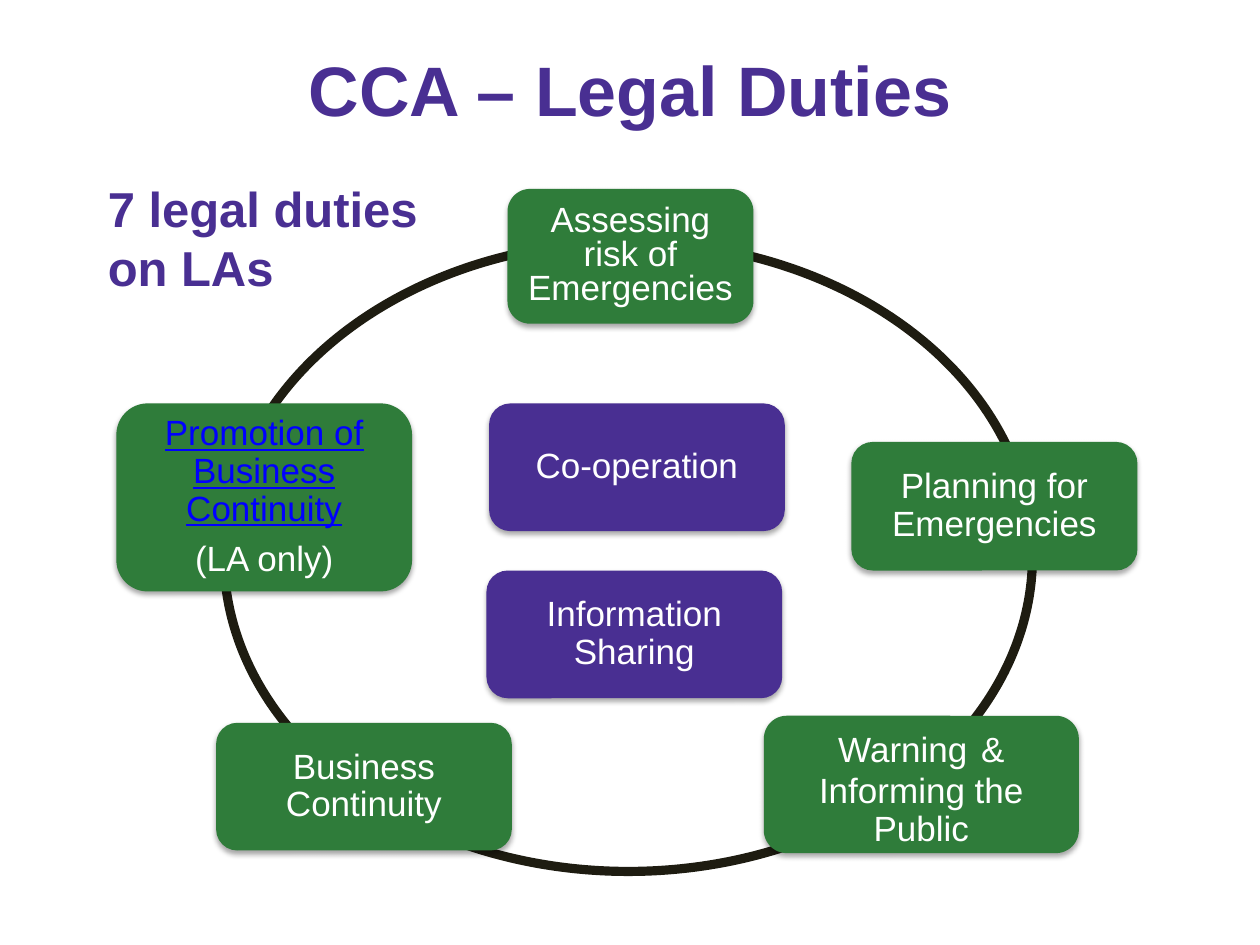
from lxml import etree
from pptx import Presentation
from pptx.dml.color import RGBColor
from pptx.enum.shapes import MSO_SHAPE as Shape
from pptx.enum.text import MSO_ANCHOR as Anchor, PP_ALIGN as Align
from pptx.oxml.ns import qn
from pptx.util import Pt

COLORS = {"purple": "492F92", "green": "2F7C3A", "ring": "1E1C11",
          "white": "FFFFFF", "link": "0000FF", "shadow": "000000"}
FONT = "Arial"
RING = (128, 138, 462, 360)

# Box relative to the ring's top left corner, fill, line spacing, paragraphs.
# A paragraph is a list of (text, size, color, underlined) runs.
DUTIES = [
    ((358.5, 114.5, 163.5, 73.5), "green", 0.9,
     [[("Planning for Emergencies", 20, "white", False)]]),
    ((162, -30, 140.5, 77), "green", 0.8,
     [[("Assessing risk of Emergencies", 20, "white", False)]]),
    ((308.5, 271, 180, 78.5), "green", 0.9,
     [[("Warning", 20, "white", False), (" ", 28, "white", False),
       ("& Informing the Public", 20, "white", False)]]),
    ((-61.5, 92.5, 169, 107.5), "green", 0.9,
     [[("Promotion of Business Continuity", 20, "link", True)],
      [("(LA only)", 20, "white", False)]]),
    ((-4.5, 275, 169, 73), "green", 0.9,
     [[("Business Continuity", 20, "white", False)]]),
    ((150, 188, 169, 73), "purple", 0.9,
     [[("Information Sharing", 20, "white", False)]]),
    ((151.5, 92.5, 169, 73), "purple", 0.9,
     [[("Co-operation", 20, "white", False)]]),
]


def rgb(name):
    return RGBColor.from_string(COLORS[name])


def add_run(paragraph, text, size, color, bold=False, underline=False):
    run = paragraph.add_run()
    run.text = text
    font = run.font
    font.name, font.size, font.bold = FONT, Pt(size), bold
    font.underline = underline
    font.color.rgb = rgb(color)


def add_soft_shadow(shape):
    shape.shadow.inherit = False
    effects = shape._element.spPr.find(qn("a:effectLst"))
    outer = etree.SubElement(effects, qn("a:outerShdw"), blurRad=str(Pt(3.1)),
                             dist=str(Pt(1.8)), dir="5400000", rotWithShape="0")
    color = etree.SubElement(outer, qn("a:srgbClr"), val=COLORS["shadow"])
    etree.SubElement(color, qn("a:alpha"), val="35000")


def add_heading(slide, box, lines, size, align, anchor, wrap):
    frame = slide.shapes.add_textbox(*map(Pt, box)).text_frame
    frame.word_wrap = wrap
    frame.vertical_anchor = anchor
    for i, line in enumerate(lines):
        paragraph = frame.paragraphs[0] if i == 0 else frame.add_paragraph()
        paragraph.alignment = align
        add_run(paragraph, line, size, "purple", bold=True)


def add_duty(slide, box, fill, spacing, paragraphs):
    duty = slide.shapes.add_shape(Shape.ROUNDED_RECTANGLE, *map(Pt, box))
    duty.fill.solid()
    duty.fill.fore_color.rgb = rgb(fill)
    duty.line.fill.background()
    add_soft_shadow(duty)
    frame = duty.text_frame
    frame.word_wrap = True
    frame.vertical_anchor = Anchor.MIDDLE
    frame.margin_left = frame.margin_right = Pt(4)
    frame.margin_top = frame.margin_bottom = Pt(4)
    for i, runs in enumerate(paragraphs):
        paragraph = frame.paragraphs[0] if i == 0 else frame.add_paragraph()
        paragraph.alignment = Align.CENTER
        paragraph.line_spacing = spacing
        paragraph.space_after = Pt(7)
        for text, size, color, underline in runs:
            add_run(paragraph, text, size, color, underline=underline)


def add_duty_cycle(slide, box):
    """Draw the ring and place every duty relative to it."""
    left, top = box[:2]
    ring = slide.shapes.add_shape(Shape.OVAL, *map(Pt, box))
    ring.fill.background()
    ring.line.color.rgb = rgb("ring")
    ring.line.width = Pt(5.25)
    ring.shadow.inherit = False
    for (x, y, width, height), fill, spacing, paragraphs in DUTIES:
        add_duty(slide, (left + x, top + y, width, height), fill, spacing, paragraphs)


def main():
    deck = Presentation()
    deck.slide_width, deck.slide_height = Pt(720), Pt(540)
    slide = deck.slides.add_slide(deck.slide_layouts[6])
    add_heading(slide, (36, 23, 648, 55.5), ["CCA – Legal Duties"], 40,
                Align.CENTER, Anchor.MIDDLE, True)
    add_duty_cycle(slide, RING)
    add_heading(slide, (54.5, 98.5, 192, 75), ["7 legal duties", "on LAs"], 28,
                Align.LEFT, Anchor.TOP, False)
    deck.save("out.pptx")


if __name__ == "__main__":
    main()
